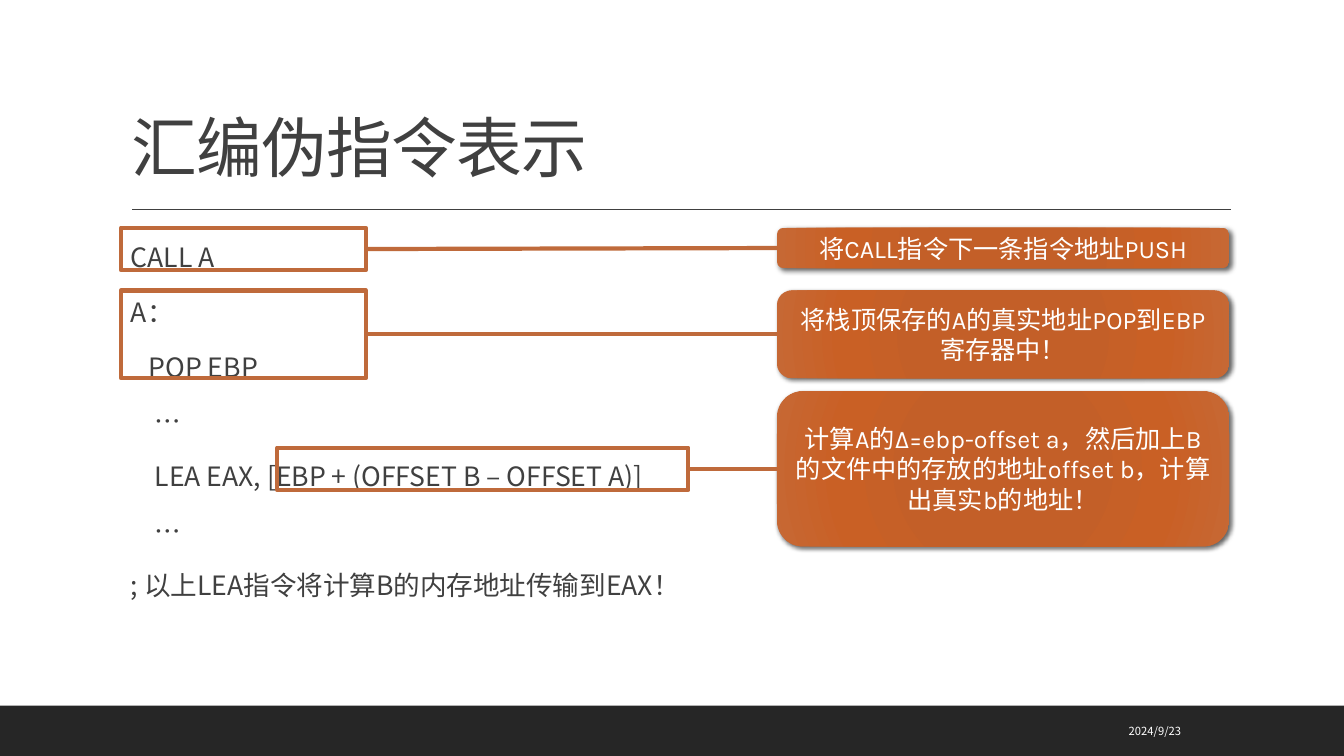
import pptx
import pptx.dml.color
import pptx.enum.shapes
import pptx.enum.text
import pptx.oxml
import pptx.oxml.ns
import pptx.util
import lxml.etree

Cm = pptx.util.Cm
Pt = pptx.util.Pt
SHAPE = pptx.enum.shapes.MSO_SHAPE
ALIGN = pptx.enum.text.PP_ALIGN
ANCHOR = pptx.enum.text.MSO_ANCHOR
qn = pptx.oxml.ns.qn


def rgb(value):
    return pptx.dml.color.RGBColor.from_string(value)


def sub(parent, tag, **attrs):
    return lxml.etree.SubElement(parent, qn(tag), attrs)


class SlideBuilder:
    CJK = "Noto Sans CJK SC"
    LATIN = "Karla"
    DARK = "404040"
    BAR = "262626"
    WHITE = "FFFFFF"
    ACCENT = "BF6A3B"
    GRADIENT = [(0, "C45D25"), (34, "C35F28"), (70, "C96025"), (100, "C66834")]

    def __init__(self, prs):
        self.s = prs.slides.add_slide(prs.slide_layouts[1])

    def add_run(self, p, text, size, color, font=CJK):
        r = p.add_run()
        r.text = text
        r.font.size = Pt(size)
        r.font.name = font
        r.font.color.rgb = rgb(color)
        sub(r.font._element, "a:ea", typeface=self.CJK)
        return r

    def place(self, sp, box):
        sp.left, sp.top, sp.width, sp.height = map(Cm, box)
        tf = sp.text_frame
        tf.word_wrap = True
        tf.auto_size = pptx.enum.text.MSO_AUTO_SIZE.NONE
        return tf

    def title(self, text, box):
        tf = self.place(self.s.shapes.title, box)
        tf.vertical_anchor = ANCHOR.BOTTOM
        p = tf.paragraphs[0]
        p.alignment = ALIGN.LEFT
        p.line_spacing = 0.9
        self.add_run(p, text, 47, self.DARK).font._element.set("spc", "-50")

    def body(self, lines, box):
        tf = self.place(self.s.placeholders[1], box)
        tf.margin_left = tf.margin_right = 0
        for i, (text, margin) in enumerate(lines):
            p = tf.paragraphs[0] if i == 0 else tf.add_paragraph()
            p.line_spacing = 1.1
            p.space_before = Pt(12)
            p.space_after = Pt(2)
            pPr = p._p.get_or_add_pPr()
            pPr.set("marL", str(Cm(margin)))
            pPr.set("indent", "0")
            sub(pPr, "a:buNone")
            self.add_run(p, text, 19, self.DARK)

    def date(self, text, box):
        tf = self.place(self.s.shapes.add_textbox(*map(Cm, box)), box)
        tf.vertical_anchor = ANCHOR.MIDDLE
        p = tf.paragraphs[0]
        p.alignment = ALIGN.RIGHT
        self.add_run(p, text, 8, self.WHITE)

    def shape(self, kind, box):
        sp = self.s.shapes.add_shape(kind, *map(Cm, box))
        sp.shadow.inherit = False
        return sp

    def bar(self, box):
        sp = self.shape(SHAPE.RECTANGLE, box)
        sp.fill.solid()
        sp.fill.fore_color.rgb = rgb(self.BAR)
        sp.line.fill.background()

    def frame(self, box):
        sp = self.shape(SHAPE.RECTANGLE, box)
        sp.fill.background()
        sp.line.color.rgb = rgb(self.ACCENT)
        sp.line.width = Pt(3)
        return sp

    def callout(self, text, box):
        sp = self.shape(SHAPE.ROUNDED_RECTANGLE, box)
        sp.line.fill.background()
        self.radial_fill(sp)
        self.drop_shadow(sp)
        tf = sp.text_frame
        tf.word_wrap = True
        tf.vertical_anchor = ANCHOR.MIDDLE
        p = tf.paragraphs[0]
        p.alignment = ALIGN.CENTER
        self.add_run(p, text, 18, self.WHITE, self.LATIN)
        return sp

    def radial_fill(self, sp):
        sp.fill.gradient()
        grad = sp._element.spPr.find(qn("a:gradFill"))
        for child in list(grad):
            grad.remove(child)
        stops = sub(grad, "a:gsLst")
        for pos, color in self.GRADIENT:
            sub(sub(stops, "a:gs", pos=str(pos * 1000)), "a:srgbClr", val=color)
        circle = sub(grad, "a:path", path="circle")
        sub(circle, "a:fillToRect", **dict.fromkeys("ltrb", "100000"))

    def drop_shadow(self, sp):
        effects = sp._element.spPr.find(qn("a:effectLst"))
        shadow = sub(effects, "a:outerShdw", blurRad=str(Pt(3.5)), dist=str(Pt(2)),
                     dir="2700000", algn="tl", rotWithShape="0")
        sub(sub(shadow, "a:srgbClr", val="000000"), "a:alpha", val="60000")

    def line(self, x1, y1, x2, y2, color, width):
        cx = self.s.shapes.add_connector(
            pptx.enum.shapes.MSO_CONNECTOR.STRAIGHT, *map(Cm, (x1, y1, x2, y2)))
        cx.line.color.rgb = rgb(color)
        cx.line.width = Pt(width)
        sub(cx._element.spPr, "a:effectLst")
        return cx

    def link(self, start, end):
        cx = self.line(0, 0, 1, 1, self.ACCENT, 3)
        cx.begin_connect(start, 3)
        cx.end_connect(end, 1)


def main():
    prs = pptx.Presentation()
    prs.slide_width = Cm(33.87)
    prs.slide_height = Cm(19.05)
    b = SlideBuilder(prs)
    b.bar((0, 17.78, 33.87, 1.27))
    b.line(3.33, 5.28, 31.01, 5.28, b.DARK, 1)
    b.title("汇编伪指令表示", (3.05, 0.79, 27.94, 4.04))
    b.body([
        ("CALL A", 0.25),
        ("A：", 0.25),
        ("POP EBP", 0.7),
        ("…", 0.85),
        ("LEA EAX, [EBP + (OFFSET B – OFFSET A)]", 0.85),
        ("…", 0.85),
        ("; 以上LEA指令将计算B的内存地址传输到EAX！", 0.25),
    ], (3.05, 5.87, 14.38, 10.44))
    b.date("2024/9/23", (22.83, 17.91, 7.19, 1.02))

    notes = [
        ((3.05, 5.74, 6.17, 1.07), 5.74, 1.02, "将CALL指令下一条指令地址PUSH"),
        ((3.05, 7.32, 6.17, 2.21), 7.32, 2.21, "将栈顶保存的A的真实地址POP到EBP寄存器中！"),
        ((6.99, 11.28, 10.36, 1.07), 9.86, 3.91,
         "计算A的Δ=ebp-offset a，然后加上B的文件中的存放的地址offset b，计算出真实b的地址！"),
    ]
    for box, top, height, text in notes:
        b.link(b.frame(box), b.callout(text, (19.58, top, 11.4, height)))
    prs.save("out.pptx")


if __name__ == "__main__":
    main()
